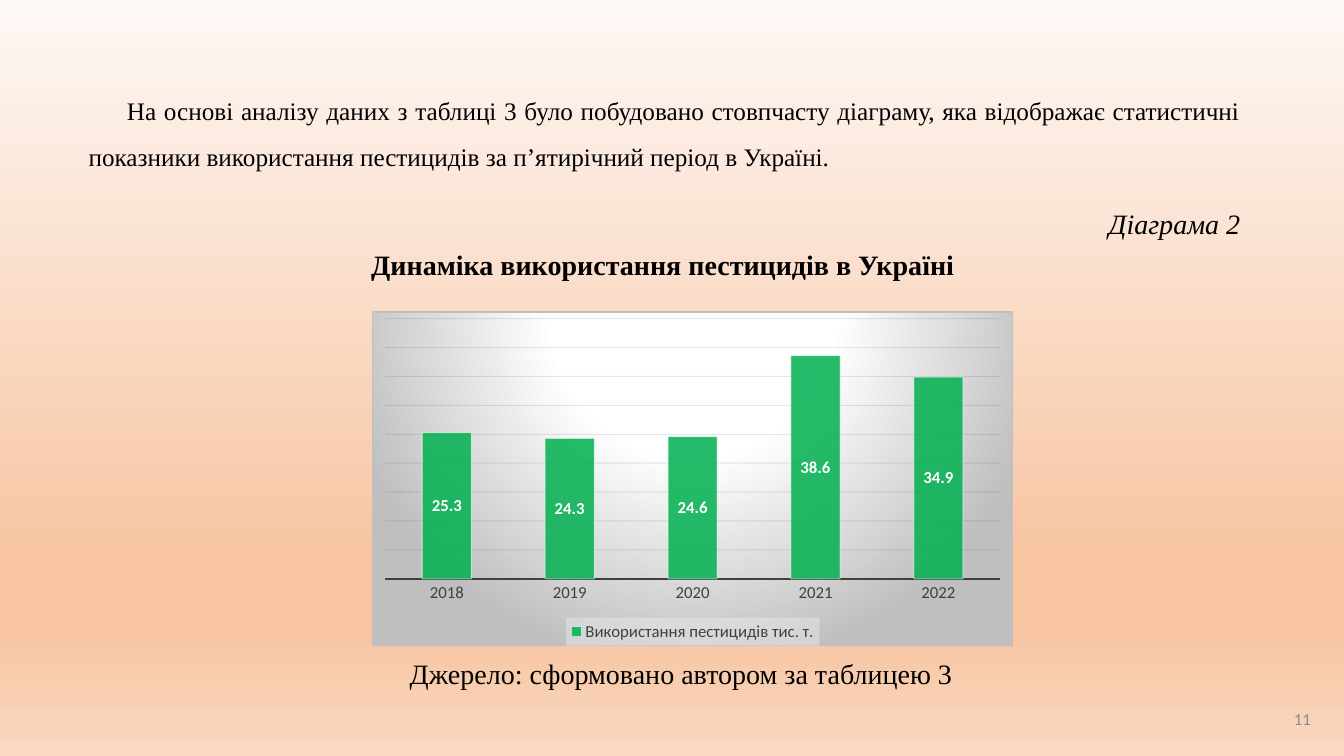
from dataclasses import dataclass

from lxml import etree
from pptx import Presentation
from pptx.chart.data import CategoryChartData
from pptx.dml.color import RGBColor
from pptx.enum.chart import XL_CHART_TYPE, XL_LABEL_POSITION, XL_LEGEND_POSITION, XL_TICK_MARK
from pptx.enum.text import MSO_ANCHOR, PP_ALIGN
from pptx.oxml import parse_xml
from pptx.oxml.ns import nsdecls, qn
from pptx.util import Inches, Pt

COLUMNS = XL_CHART_TYPE.COLUMN_CLUSTERED
LABEL_CENTER = XL_LABEL_POSITION.CENTER
LEGEND_BOTTOM = XL_LEGEND_POSITION.BOTTOM
NO_TICK = XL_TICK_MARK.NONE
TOP, MIDDLE, BOTTOM = MSO_ANCHOR.TOP, MSO_ANCHOR.MIDDLE, MSO_ANCHOR.BOTTOM
CENTER, RIGHT, JUSTIFY = PP_ALIGN.CENTER, PP_ALIGN.RIGHT, PP_ALIGN.JUSTIFY

SERIF, SANS = "Times New Roman", "Calibri"
COLORS = {
    "text": "000000", "number": "8C8C8C", "axis": "404040", "grid": "0D0D0D",
    "bar": "00B050", "white": "FFFFFF", "border": "BFBFBF", "legend": "F2F2F2",
}
PAGE_STOPS = [(0, "FEF8F5"), (74, "F7C5A2"), (83, "F7C5A2"), (100, "FAD8C1")]
CHART_STOPS = [(0, COLORS["white"]), (39, COLORS["white"]), (100, COLORS["border"])]
LINEAR = '<a:lin ang="5400000" scaled="0"/>'
CIRCLE = ('<a:path path="circle"><a:fillToRect l="50000" t="-80000" '
          'r="50000" b="180000"/></a:path>')
PESTICIDE_USE = {"2018": 25.3, "2019": 24.3, "2020": 24.6, "2021": 38.6, "2022": 34.9}


@dataclass
class TextBlock:
    text: str
    left: float
    top: float
    width: float
    height: float
    size: int = 20
    font: str = SERIF
    color: str = "text"
    align: PP_ALIGN = CENTER
    anchor: MSO_ANCHOR = TOP
    spacing: float = 0.8
    indent: float = 0
    bold: bool = False
    italic: bool = False


CAPTION_TOP, CAPTION_STEP = 2.06, 0.406
BLOCKS = [
    TextBlock("На основі аналізу даних з таблиці 3 було побудовано стовпчасту діаграму, "
              "яка відображає статистичні показники використання пестицидів за "
              "п’ятирічний період в Україні.",
              0.78, 0.71, 11.62, 1.04, size=18, align=JUSTIFY, anchor=BOTTOM,
              spacing=1.5, indent=0.38),
    TextBlock("Діаграма 2", 1.11, CAPTION_TOP, 11.29, 0.4, align=RIGHT, italic=True),
    TextBlock("Динаміка використання пестицидів в Україні",
              1.11, CAPTION_TOP + CAPTION_STEP, 10.93, 0.4, bold=True),
    TextBlock("Джерело: сформовано автором за таблицею 3",
              1.11, CAPTION_TOP + 11 * CAPTION_STEP, 11.29, 0.4),
    TextBlock("11", 12.5, 6.92, 0.6, 0.43, size=12, font=SANS, color="number",
              align=RIGHT, anchor=MIDDLE, spacing=1),
]


def rgb(name: str) -> RGBColor:
    return RGBColor.from_string(COLORS[name])


def gradient_xml(stops: list, direction: str) -> str:
    marks = "".join(f'<a:gs pos="{place * 1000}"><a:srgbClr val="{color}"/></a:gs>'
                    for place, color in stops)
    return f'<a:gradFill {nsdecls("a")} rotWithShape="1"><a:gsLst>{marks}</a:gsLst>{direction}</a:gradFill>'


def set_alpha(element, percent: int) -> None:
    color = next(element.iter(qn("a:srgbClr")))
    etree.SubElement(color, qn("a:alpha")).set("val", str(percent * 1000))


def style_font(font, *, size: int, color: str, name: str = SANS,
               bold: bool = False, italic: bool = False) -> None:
    font.size, font.name, font.bold, font.italic = Pt(size), name, bold, italic
    font.color.rgb = rgb(color)


def style_line(line, color: str, width: float) -> None:
    line.color.rgb = rgb(color)
    line.width = Pt(width)


def add_text(page, text: str, *, block: TextBlock) -> None:
    box = page.shapes.add_textbox(*map(Inches, (block.left, block.top, block.width, block.height)))
    frame = box.text_frame
    frame.word_wrap = True
    frame.vertical_anchor = block.anchor
    para = frame.paragraphs[0]
    para.alignment, para.line_spacing = block.align, block.spacing
    if block.indent:
        para._p.get_or_add_pPr().set("indent", str(Inches(block.indent)))
    span = para.add_run()
    span.text = text
    style_font(span.font, size=block.size, color=block.color, name=block.font,
               bold=block.bold, italic=block.italic)


def paint_background(page) -> None:
    page.background.fill.solid()
    solid = next(page._element.iter(qn("p:bgPr")))[0]
    solid.getparent().replace(solid, parse_xml(gradient_xml(PAGE_STOPS, LINEAR)))


def style_axes(chart) -> None:
    years, amounts = chart.category_axis, chart.value_axis
    years.major_tick_mark = NO_TICK
    style_font(years.tick_labels.font, size=12, color="axis")
    style_line(years.format.line, "axis", 1.5)
    amounts.minimum_scale, amounts.maximum_scale, amounts.major_unit = 0, 45, 5
    amounts.visible = False
    grid = amounts.major_gridlines.format.line
    style_line(grid, "grid", 0.75)
    set_alpha(amounts._element.find(qn("c:majorGridlines")), 10)


def style_bars(chart) -> None:
    plot = chart.plots[0]
    plot.gap_width, plot.vary_by_categories = 150, False
    series = plot.series[0]
    series.format.fill.solid()
    series.format.fill.fore_color.rgb = rgb("bar")
    style_line(series.format.line, "white", 0.75)
    bar_format = series._element.find(qn("c:spPr"))
    set_alpha(bar_format.find(qn("a:solidFill")), 85)
    set_alpha(bar_format.find(qn("a:ln")), 50)
    labels = series.data_labels
    labels.show_value, labels.position = True, LABEL_CENTER
    style_font(labels.font, size=12, color="white", bold=True)


def style_legend(chart) -> None:
    chart.has_legend = True
    legend = chart.legend
    legend.position, legend.include_in_layout = LEGEND_BOTTOM, False
    style_font(legend.font, size=12, color="axis")
    legend._element.find(qn("c:txPr")).addprevious(parse_xml(
        f'<c:spPr {nsdecls("c", "a")}><a:solidFill><a:srgbClr val="{COLORS["legend"]}">'
        '<a:alpha val="39000"/></a:srgbClr></a:solidFill></c:spPr>'))


def place_plot(chart, **fractions: float) -> None:
    area = chart._chartSpace.chart.plotArea
    for old in area.findall(qn("c:layout")):
        area.remove(old)
    sizes = "".join(f'<c:{key} val="{value}"/>' for key, value in fractions.items())
    area.insert(0, parse_xml(
        f'<c:layout {nsdecls("c")}><c:manualLayout><c:layoutTarget val="inner"/>'
        f'<c:xMode val="edge"/><c:yMode val="edge"/>{sizes}</c:manualLayout></c:layout>'))


def add_column_chart(page) -> None:
    data = CategoryChartData()
    data.categories = list(PESTICIDE_USE)
    data.add_series("Використання пестицидів тис. т.", list(PESTICIDE_USE.values()))
    chart = page.shapes.add_chart(COLUMNS, *map(Inches, (3.69, 3.09, 6.36, 3.32)), data).chart
    chart.has_title = False
    style_font(chart.font, size=10, color="text")
    style_axes(chart)
    style_bars(chart)
    style_legend(chart)
    place_plot(chart, x=0.02, y=0.02, w=0.96, h=0.78)
    chart._chartSpace.chart.addnext(parse_xml(
        f'<c:spPr {nsdecls("c", "a")}>{gradient_xml(CHART_STOPS, CIRCLE)}'
        f'<a:ln w="{Pt(0.75)}"><a:solidFill><a:srgbClr val="{COLORS["border"]}"/>'
        '</a:solidFill></a:ln></c:spPr>'))


def main() -> None:
    deck = Presentation()
    deck.slide_width, deck.slide_height = Inches(13.33), Inches(7.5)
    page = deck.slides.add_slide(deck.slide_layouts[6])
    paint_background(page)
    # Introduction, captions and page number
    for block in BLOCKS:
        add_text(page, block.text, block=block)
    # Pesticide use by year
    add_column_chart(page)
    deck.save("out.pptx")


if __name__ == "__main__":
    main()
